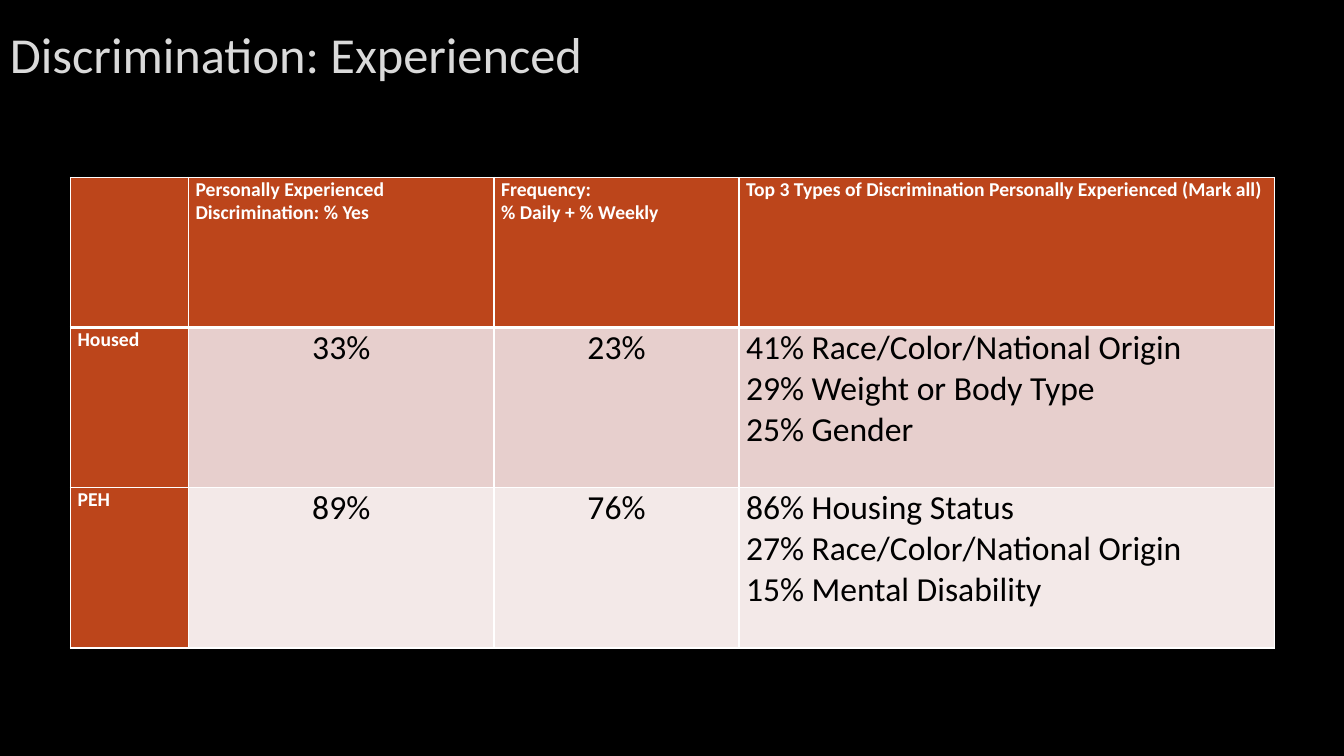
from dataclasses import dataclass

from lxml.etree import SubElement
from pptx import Presentation
from pptx.dml.color import RGBColor
from pptx.enum.text import MSO_ANCHOR, PP_ALIGN
from pptx.oxml.ns import qn
from pptx.util import Inches, Pt

# Content: each cell is a list of paragraphs
TITLE = "Discrimination: Experienced"
ROWS = [
    [
        [],
        ["Personally Experienced Discrimination: % Yes"],
        ["Frequency:", "% Daily + % Weekly"],
        ["Top 3 Types of Discrimination Personally Experienced (Mark all)"],
    ],
    [
        ["Housed"],
        ["33%"],
        ["23%"],
        ["41% Race/Color/National Origin", "29% Weight or Body Type", "25% Gender"],
    ],
    [
        ["PEH"],
        ["89%"],
        ["76%"],
        ["86% Housing Status", "27% Race/Color/National Origin", "15% Mental Disability"],
    ],
]

# Layout in inches
SLIDE_SIZE = (13.33, 7.5)
TITLE_BOX = (0, 0, 6.49, 1.06)
TABLE_ORIGIN = (0.7, 1.76)
COLUMN_WIDTHS = (1.17, 3.03, 2.43, 5.31)
ROW_HEIGHTS = (1.49, 1.59, 1.59)
CENTERED_COLUMNS = (1, 2)
CELL_MARGINS = {"margin_left": 0.07, "margin_right": 0.07, "margin_top": 0, "margin_bottom": 0}


@dataclass(frozen=True)
class Theme:
    background: str = "000000"
    title: str = "DADADA"
    title_outline: str = "404040"
    header: str = "BC451B"
    bands: tuple = ("E7CFCD", "F3E9E8")
    border: str = "FFFFFF"
    header_text: str = "FFFFFF"
    body_text: str = "000000"
    font: str = "Calibri"
    title_size: int = 36
    header_size: int = 14
    body_size: int = 24
    border_width: int = 1
    header_rule: int = 3


THEME = Theme()
TITLE_FORMAT = {"name": THEME.font, "size": Pt(THEME.title_size), "bold": False}
HEADER_FORMAT = {"name": THEME.font, "size": Pt(THEME.header_size), "bold": True}
BODY_FORMAT = {"name": THEME.font, "size": Pt(THEME.body_size), "bold": False}


def apply_format(target, values):
    for name, value in values.items():
        setattr(target, name, value)


def paint(fill, color):
    fill.solid()
    fill.fore_color.rgb = RGBColor.from_string(color)


def write_run(paragraph, text, font_format, color):
    run = paragraph.add_run()
    run.text = text
    apply_format(run.font, font_format)
    run.font.color.rgb = RGBColor.from_string(color)
    return run


def add_line(parent, tag, color, width):
    line = SubElement(parent, qn(tag), w=str(Pt(width)))
    solid = SubElement(line, qn("a:solidFill"))
    return line, SubElement(solid, qn("a:srgbClr"), val=color)


def add_title(slide):
    frame = slide.shapes.add_textbox(*map(Inches, TITLE_BOX)).text_frame
    apply_format(frame, {"word_wrap": True, "vertical_anchor": MSO_ANCHOR.MIDDLE})
    paragraph = frame.paragraphs[0]
    paragraph.space_after = Pt(6)
    run = write_run(paragraph, TITLE, TITLE_FORMAT, THEME.title)
    # Faint outline, placed ahead of the text fill
    properties = run.font._element
    outline, color = add_line(properties, "a:ln", THEME.title_outline, 0.75)
    SubElement(color, qn("a:alpha"), val="10000")
    properties.insert(0, outline)


def style_cell(cell, row, column, lines):
    is_header = row == 0 or column == 0
    apply_format(cell, {name: Inches(value) for name, value in CELL_MARGINS.items()})
    cell.vertical_anchor = MSO_ANCHOR.TOP

    # Borders, with a heavy rule under the header row
    heavy_sides = {0: "a:lnB", 1: "a:lnT"}
    for side in ("a:lnL", "a:lnR", "a:lnT", "a:lnB"):
        width = THEME.header_rule if heavy_sides.get(row) == side else THEME.border_width
        add_line(cell._tc.get_or_add_tcPr(), side, THEME.border, width)
    paint(cell.fill, THEME.header if is_header else THEME.bands[row - 1])

    # Text
    font_format = HEADER_FORMAT if is_header else BODY_FORMAT
    color = THEME.header_text if is_header else THEME.body_text
    centered = not is_header and column in CENTERED_COLUMNS
    frame = cell.text_frame
    for index, text in enumerate(lines):
        paragraph = frame.add_paragraph() if index else frame.paragraphs[0]
        paragraph.alignment = PP_ALIGN.CENTER if centered else PP_ALIGN.LEFT
        write_run(paragraph, text, font_format, color)


def add_discrimination_table(slide):
    bounds = (*TABLE_ORIGIN, sum(COLUMN_WIDTHS), sum(ROW_HEIGHTS))
    table = slide.shapes.add_table(
        len(ROW_HEIGHTS), len(COLUMN_WIDTHS), *map(Inches, bounds)
    ).table
    table.first_col = True
    for column, width in zip(table.columns, COLUMN_WIDTHS):
        column.width = Inches(width)
    for row, height in zip(table.rows, ROW_HEIGHTS):
        row.height = Inches(height)
    for row, cells in enumerate(ROWS):
        for column, lines in enumerate(cells):
            style_cell(table.cell(row, column), row, column, lines)


def main():
    presentation = Presentation()
    presentation.slide_width, presentation.slide_height = map(Inches, SLIDE_SIZE)
    slide = presentation.slides.add_slide(presentation.slide_layouts[6])
    paint(slide.background.fill, THEME.background)
    add_title(slide)
    add_discrimination_table(slide)
    presentation.save("out.pptx")


if __name__ == "__main__":
    main()
